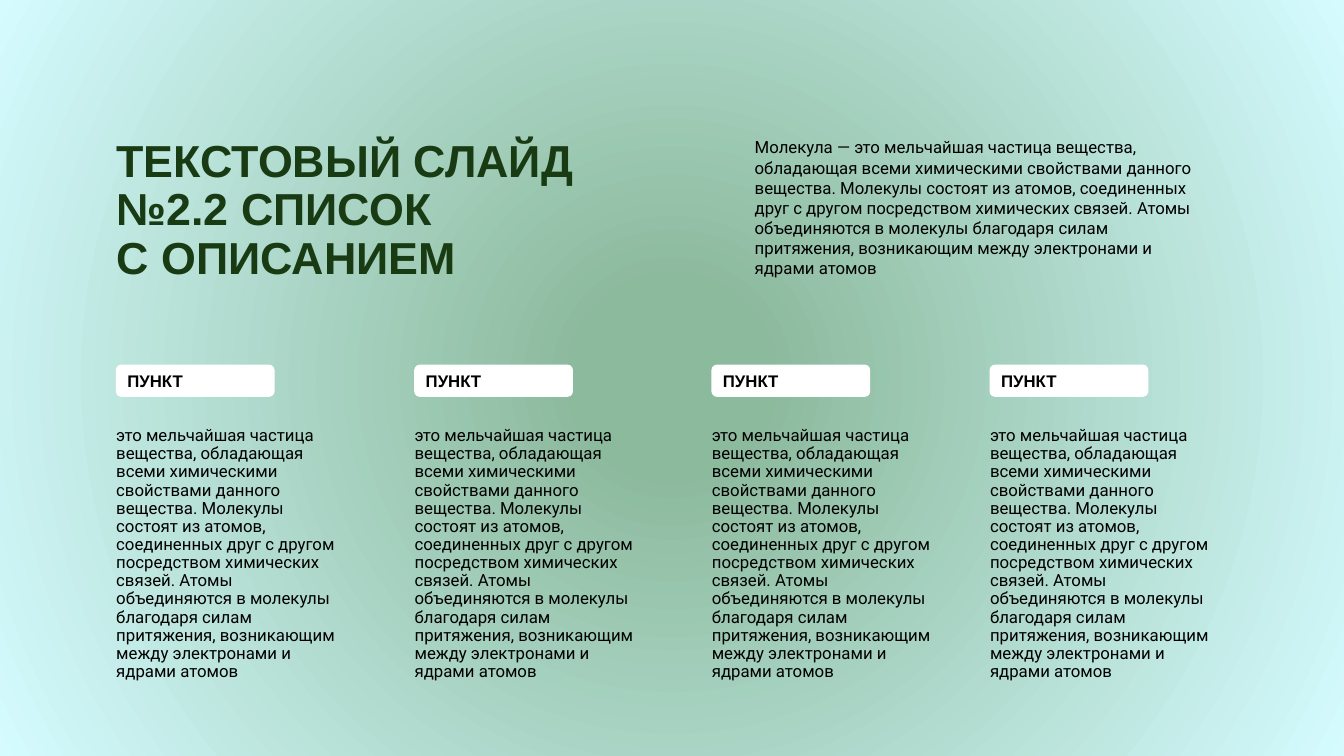
"""Build a text slide with a heading, an introduction and four described points."""
from lxml import etree
from pptx import Presentation
from pptx.dml.color import RGBColor
from pptx.enum.shapes import MSO_SHAPE
from pptx.enum.text import MSO_ANCHOR, PP_ALIGN
from pptx.oxml.ns import qn
from pptx.util import Cm, Pt

COLORS = {
    "center": "8CBA9D",
    "edge": "D5FBFF",
    "heading": "193B13",
    "label": "FFFFFF",
    "text": "000000",
}
HEADING = {"name": "Arial", "size": Pt(32), "bold": True}
LABEL = {"name": "Arial", "size": Pt(12), "bold": True}
BODY = {"name": "Roboto", "size": Pt(12), "bold": False}

DESCRIPTION = (
    "это мельчайшая частица вещества, обладающая всеми химическими свойствами "
    "данного вещества. Молекулы состоят из атомов, соединенных друг с другом "
    "посредством химических связей. Атомы объединяются в молекулы благодаря силам "
    "притяжения, возникающим между электронами и ядрами атомов"
)


def write(shape, text, font, color="text", anchor=MSO_ANCHOR.TOP, spacing=1.0):
    frame = shape.text_frame
    frame.word_wrap = True
    frame.vertical_anchor = anchor
    paragraph = frame.paragraphs[0]
    paragraph.text = text
    paragraph.alignment = PP_ALIGN.LEFT
    paragraph.line_spacing = spacing
    for run in paragraph.runs:
        for attribute, value in font.items():
            setattr(run.font, attribute, value)
        run.font.color.rgb = RGBColor.from_string(COLORS[color])


presentation = Presentation()
presentation.slide_width = Cm(33.87)
presentation.slide_height = Cm(19.05)
slide = presentation.slides.add_slide(presentation.slide_layouts[6])

background = slide.background.fill
background.gradient()
for stop, position, color in zip(background.gradient_stops, (0.12, 1), ("center", "edge")):
    stop.position = position
    stop.color.rgb = RGBColor.from_string(COLORS[color])
gradient = slide.background._cSld.find(".//" + qn("a:gradFill"))
gradient.remove(gradient.find(qn("a:lin")))
radial = etree.SubElement(gradient, qn("a:path"), path="circle")
etree.SubElement(radial, qn("a:fillToRect"), l="50000", t="50000", r="50000", b="50000")

heading = slide.shapes.add_textbox(Cm(2.69), Cm(3.48), Cm(14.5), Cm(3.68))
write(heading, "ТЕКСТОВЫЙ СЛАЙД №2.2 СПИСОК\vС ОПИСАНИЕМ", HEADING, "heading",
      MSO_ANCHOR.MIDDLE, 0.9)

introduction = slide.shapes.add_textbox(Cm(18.77), Cm(3.33), Cm(11.56), Cm(6.27))
write(introduction, "Молекула — " + DESCRIPTION, BODY)

for left in (2.92, 10.44, 17.93, 24.94):
    point = slide.shapes.add_group_shape()
    label = point.shapes.add_shape(
        MSO_SHAPE.ROUNDED_RECTANGLE, Cm(left), Cm(9.19), Cm(4), Cm(0.81))
    label.shadow.inherit = False
    label.fill.solid()
    label.fill.fore_color.rgb = RGBColor.from_string(COLORS["label"])
    label.line.fill.background()
    write(label, "ПУНКТ", LABEL, anchor=MSO_ANCHOR.MIDDLE)

    description = point.shapes.add_textbox(Cm(left - 0.24), Cm(10.64), Cm(6.22), Cm(6.27))
    write(description, DESCRIPTION, BODY, spacing=0.9)

presentation.save("out.pptx")
